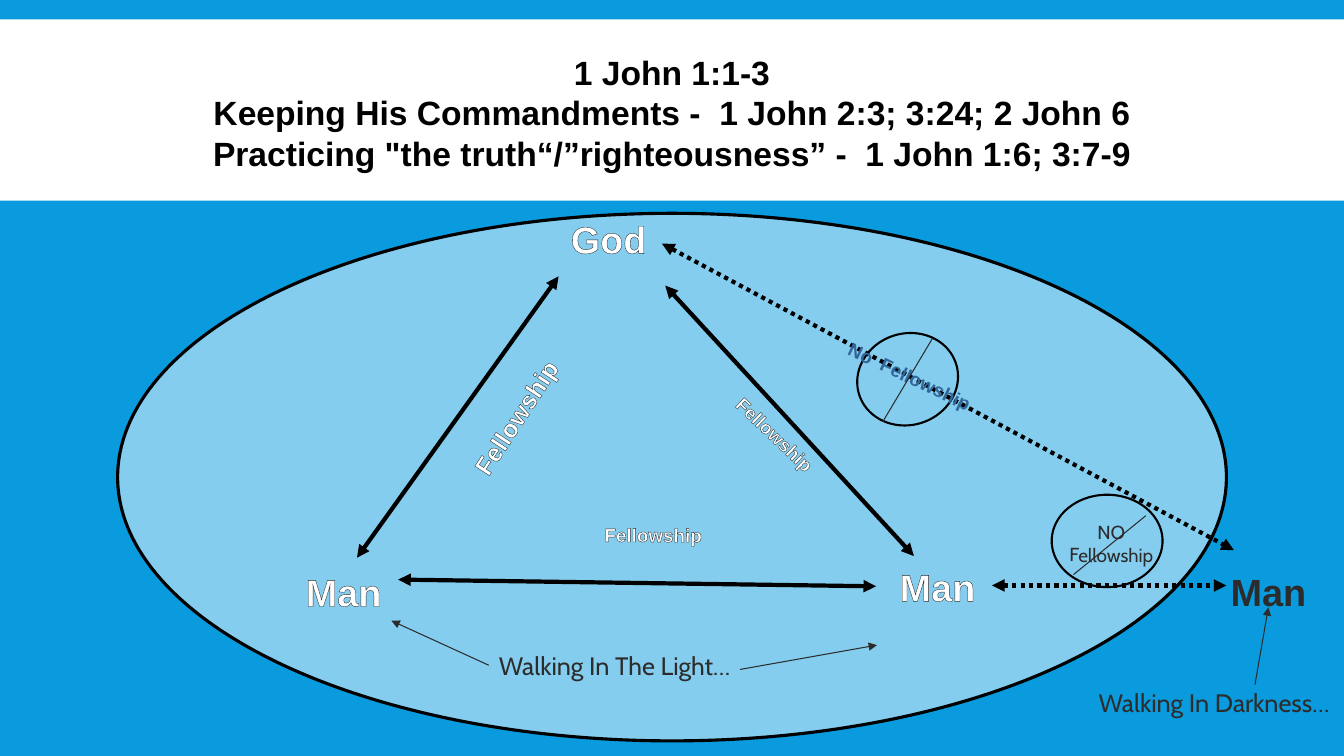
from pptx import Presentation
from pptx import util as u
from pptx.dml.color import RGBColor
from pptx.enum import dml, shapes, text
from pptx.oxml.ns import qn
from lxml import etree

BLUE = RGBColor(0x09, 0x9B, 0xDD)
WHITE = RGBColor(0xFF, 0xFF, 0xFF)
BLACK = RGBColor(0, 0, 0)
CHARCOAL = RGBColor(0x2C, 0x2C, 0x2C)
STEEL = RGBColor(0x33, 0x66, 0x99)
COLUMNS, ROWS = 16, 9


class Diagram:
    """Draws on one slide; all lengths are columns and rows of a 16 by 9 grid."""

    def __init__(self, deck):
        self.slide = deck.slides.add_slide(deck.slide_layouts[6])
        self.column = deck.slide_width / COLUMNS
        self.row = deck.slide_height / ROWS
        self.slide.background.fill.solid()
        self.slide.background.fill.fore_color.rgb = BLUE

    def place(self, *lengths):
        """Turn alternating columns and rows into slide lengths."""
        return [round(length * (self.row if i % 2 else self.column))
                for i, length in enumerate(lengths)]

    def area(self, preset, box, fill=None, opacity=100, line=0, turn=0):
        area = self.slide.shapes.add_shape(preset, *self.place(*box))
        area.shadow.inherit = False
        area.rotation = turn
        if fill is None:
            area.fill.background()
        else:
            area.fill.solid()
            area.fill.fore_color.rgb = fill
            if opacity < 100:
                color = area.fill._xPr.find(".//" + qn("a:srgbClr"))
                etree.SubElement(color, qn("a:alpha"), val=str(opacity * 1000))
        if line:
            area.line.color.rgb = BLACK
            area.line.width = u.Pt(line)
        else:
            area.line.fill.background()

    def label(self, words, box, size, color=WHITE, outline=None, font="Arial",
              bold=True, turn=0, wrap=False, align=text.PP_ALIGN.CENTER):
        label = self.slide.shapes.add_textbox(*self.place(*box))
        label.rotation = turn
        frame = label.text_frame
        frame.word_wrap = wrap
        if not wrap:
            frame.margin_left = frame.margin_right = 0
        frame.text = words
        for paragraph in frame.paragraphs:
            paragraph.alignment = align
            style = paragraph.font
            style.name, style.size, style.bold = font, u.Pt(size), bold
            style.color.rgb = color
            if outline is not None:
                edge = etree.Element(qn("a:ln"), w=str(u.Pt(0.75)))
                fill = etree.SubElement(edge, qn("a:solidFill"))
                etree.SubElement(fill, qn("a:srgbClr"), val=str(outline))
                style._rPr.insert(0, edge)
        return label

    def caption(self, words, box):
        return self.label(words, box, 18, CHARCOAL, font="Cabin", bold=False,
                          wrap=True, align=text.PP_ALIGN.LEFT)

    def line(self, start, end, color=CHARCOAL, width=0.75, dotted=False,
             heads=()):
        line = self.slide.shapes.add_connector(
            shapes.MSO_CONNECTOR.STRAIGHT, *self.place(*start, *end))
        line.line.color.rgb = color
        line.line.width = u.Pt(width)
        if dotted:
            line.line.dash_style = dml.MSO_LINE.ROUND_DOT
        stroke = line.line._get_or_add_ln()
        for head in heads:
            etree.SubElement(stroke, qn("a:" + head), type="triangle")
        etree.SubElement(line._element.spPr, qn("a:effectLst"))
        return line

    def bond(self, start, end, dotted=False):
        return self.line(start, end, BLACK, 3, dotted, ("headEnd", "tailEnd"))

    def pointer(self, start, end):
        return self.line(start, end, heads=("tailEnd",))


def main():
    deck = Presentation()
    deck.slide_width, deck.slide_height = u.Inches(13.33), u.Inches(7.5)
    diagram = Diagram(deck)
    oval = shapes.MSO_SHAPE.OVAL

    diagram.area(shapes.MSO_SHAPE.RECTANGLE, (0, 0.23, 16, 2.16), WHITE)
    diagram.area(oval, (1.4, 2.54, 13.2, 6.28), WHITE, opacity=50, line=2.25)
    diagram.label("1 John 1:1-3\n"
                  "Keeping His Commandments -  1 John 2:3; 3:24; 2 John 6\n"
                  "Practicing \"the truth“/”righteousness” -  1 John 1:6; 3:7-9",
                  (2.19, 0.56, 11.62, 1.94), 24, BLACK, BLACK, wrap=True)

    for start, end in (((6.65, 3.29), (4.25, 6.64)),
                       ((4.74, 6.9), (10.43, 6.98)),
                       ((7.92, 3.4), (10.88, 6.62))):
        diagram.bond(start, end)

    for name, box in (("God", (6.67, 2.51, 1.15, 0.89)),
                      ("Man", (3.53, 6.71, 1.12, 0.97)),
                      ("Man", (10.51, 6.65, 1.3, 1.03))):
        diagram.label(name, box, 27, outline=CHARCOAL)
    outsider = diagram.label("Man", (14.6, 6.71, 1, 0.52), 27, CHARCOAL, WHITE)
    diagram.bond((7.88, 2.9), (14.69, 6.55), dotted=True)
    diagram.bond((11.81, 6.97), (14.6, 6.97), dotted=True).end_connect(outsider, 1)

    for box, size, turn in (((4.63, 4.7, 3.11, 0.59), 18, 303.1),
                            ((6.31, 6.17, 2.93, 0.72), 13.5, 0.3),
                            ((7.68, 4.93, 2.86, 0.72), 13.5, 43.6)):
        diagram.label("Fellowship", box, size, outline=CHARCOAL, turn=turn)

    diagram.area(oval, (10.2, 3.97, 1.21, 1.09), line=1.5, turn=342.5)
    diagram.label("No  Fellowship", (9.65, 4.28, 2.3, 0.53), 13.5, STEEL, turn=25.4)
    diagram.line((10.51, 5.02), (11.1, 4.03))

    diagram.area(oval, (12.52, 5.89, 1.32, 1.1), line=1.5)
    diagram.label("NO\nFellowship", (12.61, 6.14, 1.24, 0.65), 13.5, CHARCOAL,
                  font="Cabin", bold=False, turn=0.3)
    diagram.line((12.78, 6.84), (13.64, 6.14))

    light = diagram.caption("Walking In The Light…", (5.82, 7.68, 3.46, 0.48))
    diagram.caption("Walking In Darkness…", (12.96, 8.12, 3.05, 0.48))
    diagram.pointer((5.82, 7.92), (4.66, 7.39)).begin_connect(light, 1)
    diagram.pointer((8.81, 7.97), (10.44, 7.68))
    diagram.pointer((14.94, 8.15), (15.1, 7.23)).end_connect(outsider, 2)

    deck.save("out.pptx")


if __name__ == "__main__":
    main()
